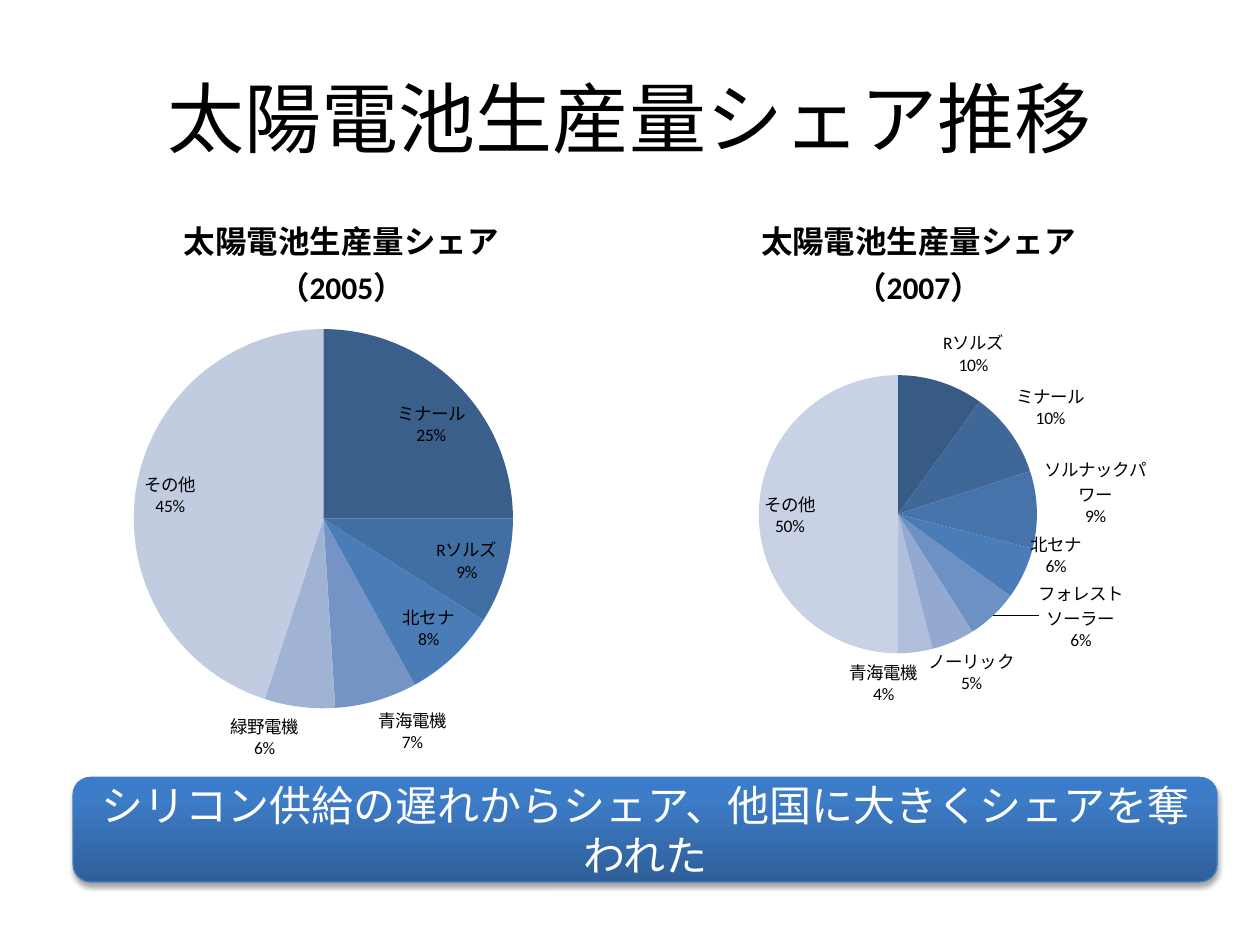
import copy

import pptx
import pptx.chart.data
import pptx.dml.color
import pptx.enum.chart
import pptx.enum.shapes
import pptx.enum.text
import pptx.oxml
import pptx.oxml.ns
import pptx.util
from pptx.util import Inches

FONT = "Calibri"
COLORS = {
    "text": "000000",
    "banner_text": "FFFFFF",
    "banner_line": "4B7EBC",
}
BANNER_STOPS = [(0, "2F5F99"), (0.8, "3D7CC7"), (1, "3A7CCB")]

SHARES_2005 = [
    ("ミナール", 25, "3A5F8B"), ("Rソルズ", 9, "426FA3"),
    ("北セナ", 8, "4A7CB8"), ("青海電機", 7, "7394C5"),
    ("緑野電機", 6, "A0B3D5"), ("その他", 45, "C2CCE1"),
]
SHARES_2007 = [
    ("Rソルズ", 10, "385B85"), ("ミナール", 10, "3F6899"),
    ("ソルナックパワー", 9, "4673AA"), ("北セナ", 6, "4A7CB8"),
    ("フォレストソーラー", 6, "6E91C4"), ("ノーリック", 5, "94A9CF"),
    ("青海電機", 4, "B0BFDB"), ("その他", 50, "C9D1E5"),
]


def rgb(value):
    return pptx.dml.color.RGBColor.from_string(value)


def style_font(font, size, color, bold=False):
    font.name = FONT
    font.size = pptx.util.Pt(size)
    font.bold = bold
    font.color.rgb = rgb(color)


def chart_xml(body):
    namespace = pptx.oxml.ns.nsdecls("c")
    return pptx.oxml.parse_xml(body.replace(">", f" {namespace}>", 1))


def place_box(shape, box):
    shape.left, shape.top, shape.width, shape.height = map(Inches, box)


def add_title(slide, box, wording):
    title = slide.shapes.title
    place_box(title, box)
    frame = title.text_frame
    frame.text = wording
    frame.vertical_anchor = pptx.enum.text.MSO_ANCHOR.MIDDLE
    paragraph = frame.paragraphs[0]
    paragraph.alignment = pptx.enum.text.PP_ALIGN.CENTER
    style_font(paragraph.runs[0].font, 44, COLORS["text"])


def set_pie_area(chart, box, pie_box):
    """Fix the pie inside the chart; both boxes are in slide inches."""
    left, top, width, height = box
    pie_left, pie_top, diameter = pie_box
    fractions = {
        "x": (pie_left - left) / width, "y": (pie_top - top) / height,
        "w": diameter / width, "h": diameter / height,
    }
    values = "".join(f'<c:{key} val="{value:.3f}"/>' for key, value in fractions.items())
    layout = chart_xml(
        '<c:layout><c:manualLayout><c:layoutTarget val="inner"/>'
        f'<c:xMode val="edge"/><c:yMode val="edge"/>{values}'
        "</c:manualLayout></c:layout>")
    plot_area = chart._chartSpace.chart.plotArea
    for old in plot_area.findall(pptx.oxml.ns.qn("c:layout")):
        plot_area.remove(old)
    plot_area.insert(0, layout)


def add_share_pie(slide, box, pie_box, year, shares):
    data = pptx.chart.data.CategoryChartData()
    data.categories = [maker for maker, _, _ in shares]
    data.add_series("Series 1", [share for _, share, _ in shares])
    chart = slide.shapes.add_chart(
        pptx.enum.chart.XL_CHART_TYPE.PIE, *map(Inches, box), data).chart
    style_font(chart.font, 10, COLORS["text"])
    chart.has_legend = False
    chart.has_title = True
    heading = chart.chart_title.text_frame
    heading.text = f"太陽電池生産量シェア（{year}）"
    style_font(heading.paragraphs[0].runs[0].font, 18, COLORS["text"], bold=True)
    set_pie_area(chart, box, pie_box)

    # Slices
    chart.plots[0].vary_by_categories = True
    series = chart.plots[0].series[0]
    for index, (_, _, color) in enumerate(shares):
        fill = series.points[index].format.fill
        fill.solid()
        fill.fore_color.rgb = rgb(color)

    # Labels: maker above its percentage
    labels = series.data_labels
    labels.show_value = False
    labels.show_category_name = True
    labels.show_percentage = True
    labels.position = pptx.enum.chart.XL_LABEL_POSITION.BEST_FIT
    style_font(labels.font, 10, COLORS["text"])
    last_flag = labels._element.find(pptx.oxml.ns.qn("c:showBubbleSize"))
    last_flag.addnext(chart_xml("<c:separator>\n</c:separator>"))


def add_banner(slide, box, wording):
    banner = slide.shapes.add_shape(
        pptx.enum.shapes.MSO_SHAPE.ROUNDED_RECTANGLE, *map(Inches, box))
    banner.line.color.rgb = rgb(COLORS["banner_line"])
    banner.line.width = pptx.util.Pt(0.75)

    # Gradient, dark at the bottom
    banner.fill.gradient()
    banner.fill.gradient_angle = 90
    last_stop = banner.fill.gradient_stops[1]._gs
    last_stop.addnext(copy.deepcopy(last_stop))
    for stop, (position, color) in zip(banner.fill.gradient_stops, BANNER_STOPS):
        stop.position = position
        stop.color.rgb = rgb(color)

    # Soft shadow below
    banner.shadow.inherit = False
    effects = banner._element.spPr.find(pptx.oxml.ns.qn("a:effectLst"))
    effects.append(pptx.oxml.parse_xml(
        f'<a:outerShdw {pptx.oxml.ns.nsdecls("a")} blurRad="40000" dist="23000" '
        'dir="5400000" rotWithShape="0"><a:srgbClr val="000000">'
        '<a:alpha val="35000"/></a:srgbClr></a:outerShdw>'))

    frame = banner.text_frame
    frame.text = wording
    frame.word_wrap = True
    frame.vertical_anchor = pptx.enum.text.MSO_ANCHOR.MIDDLE
    paragraph = frame.paragraphs[0]
    paragraph.alignment = pptx.enum.text.PP_ALIGN.CENTER
    style_font(paragraph.runs[0].font, 24, COLORS["banner_text"])


def main():
    deck = pptx.Presentation()
    deck.slide_width, deck.slide_height = Inches(10), Inches(7.5)
    slide = deck.slides.add_slide(deck.slide_layouts.get_by_name("Title Only"))
    add_title(slide, (0.5, 0.3, 9, 1.25), "太陽電池生産量シェア推移")
    add_share_pie(slide, (0.5, 1.5, 4.42, 4.67), (1.06, 2.61, 3.01), 2005, SHARES_2005)
    add_share_pie(slide, (5.08, 1.5, 4.42, 4.59), (6.02, 2.98, 2.21), 2007, SHARES_2007)
    add_banner(slide, (0.58, 6.17, 9.08, 0.83),
               "シリコン供給の遅れからシェア、他国に大きくシェアを奪われた")
    deck.save("out.pptx")


if __name__ == "__main__":
    main()
